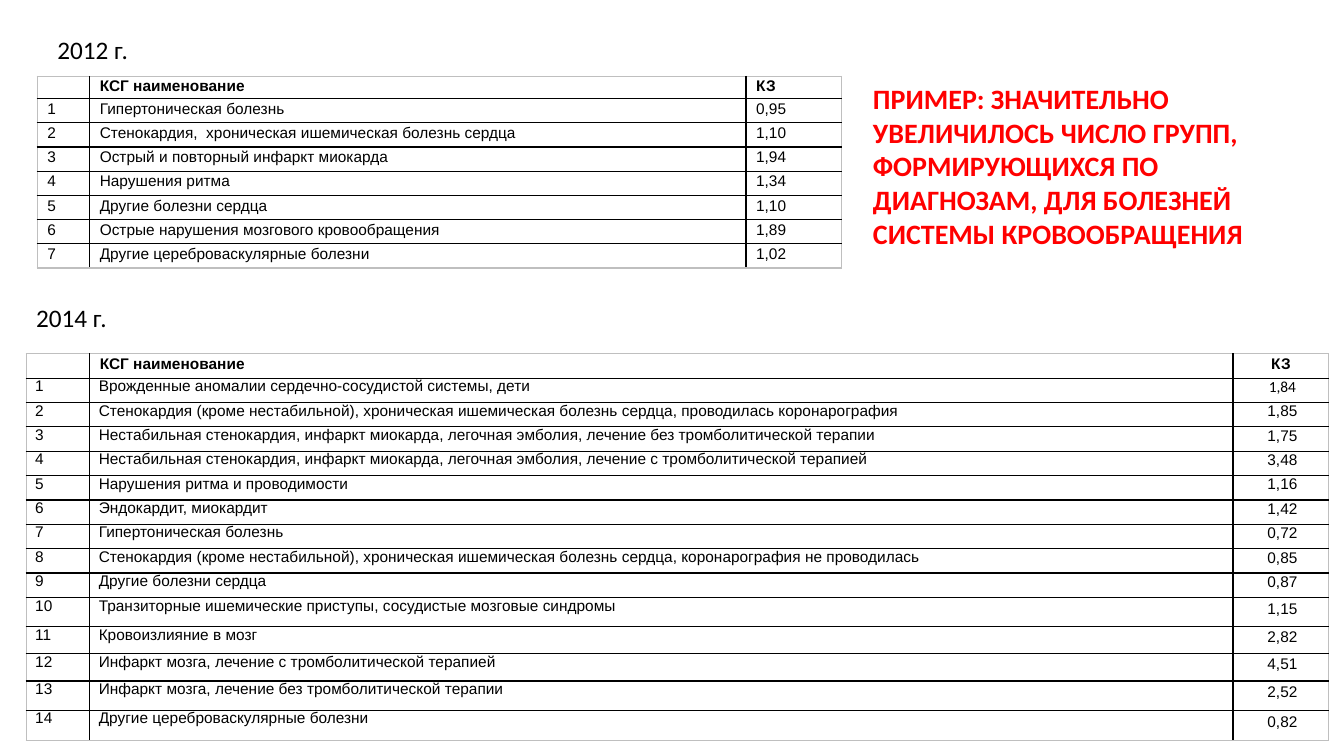
from lxml import etree
from pptx import Presentation
from pptx.dml.color import RGBColor
from pptx.enum.text import MSO_ANCHOR, MSO_AUTO_SIZE, PP_ALIGN
from pptx.oxml.ns import qn
from pptx.util import Inches, Pt

TOP, MIDDLE = MSO_ANCHOR.TOP, MSO_ANCHOR.MIDDLE
LEFT, CENTER = PP_ALIGN.LEFT, PP_ALIGN.CENTER
FIT = MSO_AUTO_SIZE.SHAPE_TO_FIT_TEXT
BLACK = RGBColor(0, 0, 0)
RED = RGBColor(255, 0, 0)
GREY = RGBColor(0xBF, 0xBF, 0xBF)

HEADER = ("", "КСГ наименование", "КЗ")
GROUPS_2012 = [
    ("Гипертоническая болезнь", "0,95"),
    ("Стенокардия,  хроническая ишемическая болезнь сердца", "1,10"),
    ("Острый и повторный инфаркт миокарда", "1,94"),
    ("Нарушения ритма", "1,34"),
    ("Другие болезни сердца", "1,10"),
    ("Острые нарушения мозгового кровообращения", "1,89"),
    ("Другие цереброваскулярные болезни", "1,02"),
]
GROUPS_2014 = [
    ("Врожденные аномалии сердечно-сосудистой системы, дети", "1,84"),
    ("Стенокардия (кроме нестабильной), хроническая ишемическая болезнь сердца, проводилась коронарография", "1,85"),
    ("Нестабильная стенокардия, инфаркт миокарда, легочная эмболия, лечение без тромболитической терапии", "1,75"),
    ("Нестабильная стенокардия, инфаркт миокарда, легочная эмболия, лечение с тромболитической терапией", "3,48"),
    ("Нарушения ритма и проводимости", "1,16"),
    ("Эндокардит, миокардит", "1,42"),
    ("Гипертоническая болезнь", "0,72"),
    ("Стенокардия (кроме нестабильной), хроническая ишемическая болезнь сердца, коронарография не проводилась", "0,85"),
    ("Другие болезни сердца", "0,87"),
    ("Транзиторные ишемические приступы, сосудистые мозговые синдромы", "1,15"),
    ("Кровоизлияние в мозг", "2,82"),
    ("Инфаркт мозга, лечение с тромболитической терапией", "4,51"),
    ("Инфаркт мозга, лечение без тромболитической терапии", "2,52"),
    ("Другие цереброваскулярные болезни", "0,82"),
]
HEADER_INSETS = (0.1, 0, 0.1, 0)
TABLES = [
    {"groups": GROUPS_2012, "at": (0.37, 0.76), "height": 1.9,
     "cols": (0.52, 6.51, 0.95), "first": [0.22], "last": [],
     "insets": HEADER_INSETS, "anchor": MIDDLE, "value_align": LEFT, "fonts": {}},
    {"groups": GROUPS_2014, "at": (0.26, 3.51), "height": 3.84,
     "cols": (0.63, 11.34, 0.95), "first": [], "last": [0.29, 0.27, 0.27, 0.29, 0.3],
     "insets": (0.09, 0.04, 0.06, 0.07), "anchor": TOP, "value_align": CENTER,
     "fonts": {(1, 2): "Calibri"}},
]
CAPTION = {"size": Pt(18), "name": "Calibri", "bold": False}
CALLOUT = {"size": Pt(20), "name": "Calibri", "bold": True}
TEXTS = [
    ("2012 г.", (0.47, 0.29, 0.91, 0.4), False, CAPTION, BLACK),
    ("2014 г.", (0.26, 2.95, 0.91, 0.4), False, CAPTION, BLACK),
    ("ПРИМЕР: ЗНАЧИТЕЛЬНО УВЕЛИЧИЛОСЬ ЧИСЛО ГРУПП, ФОРМИРУЮЩИХСЯ ПО "
     "ДИАГНОЗАМ, ДЛЯ БОЛЕЗНЕЙ СИСТЕМЫ КРОВООБРАЩЕНИЯ",
     (8.56, 0.76, 4.51, 1.78), True, CALLOUT, RED),
]


def set_format(target, values):
    for name, value in values.items():
        setattr(target, name, value)


def add_border(cell, side, color):
    ln = etree.SubElement(cell._tc.get_or_add_tcPr(), qn("a:" + side), w=str(Pt(1)))
    fill = etree.SubElement(ln, qn("a:solidFill"))
    etree.SubElement(fill, qn("a:srgbClr"), val=str(color))


def add_groups(s, t):
    rows = [HEADER] + [(str(n), *group) for n, group in enumerate(t["groups"], 1)]
    fixed = t["first"] + t["last"]
    regular = len(rows) - len(fixed)
    step = (t["height"] - sum(fixed)) / regular
    heights = t["first"] + [step] * regular + t["last"]
    x, y = t["at"]
    table = s.shapes.add_table(len(rows), len(HEADER), Inches(x), Inches(y),
                               Inches(sum(t["cols"])), Inches(t["height"])).table
    set_format(table, {"first_row": False, "horz_banding": False})
    for col, width in zip(table.columns, t["cols"]):
        col.width = Inches(width)
    last_row, last_col = len(rows) - 1, len(HEADER) - 1
    for i, row in enumerate(rows):
        table.rows[i].height = Inches(heights[i])
        for j, text in enumerate(row):
            cell = table.cell(i, j)
            insets = t["insets"] if i else HEADER_INSETS
            sides = ("margin_left", "margin_top", "margin_right", "margin_bottom")
            set_format(cell, dict(zip(sides, map(Inches, insets))))
            cell.vertical_anchor = MIDDLE if i == 0 or j == last_col else t["anchor"]
            edges = {"lnL": j == 0, "lnR": j == last_col, "lnT": i == 0, "lnB": i == last_row}
            for side, outer in edges.items():
                add_border(cell, side, GREY if outer else BLACK)
            cell.fill.background()
            p = cell.text_frame.paragraphs[0]
            set_format(p, {"line_spacing": 0.7,
                           "alignment": t["value_align"] if j == last_col else LEFT})
            if not text:
                etree.SubElement(p._p, qn("a:endParaRPr"), sz="1100")
                continue
            r = p.add_run()
            r.text = text
            set_format(r.font, {"size": Pt(11), "bold": i == 0,
                                "name": t["fonts"].get((i, j), "Arial")})
            r.font.color.rgb = BLACK


def add_text(s, text, box, wrap, font, color):
    tf = s.shapes.add_textbox(*map(Inches, box)).text_frame
    set_format(tf, {"word_wrap": wrap, "auto_size": FIT})
    r = tf.paragraphs[0].add_run()
    r.text = text
    set_format(r.font, font)
    r.font.color.rgb = color


def main():
    prs = Presentation()
    set_format(prs, {"slide_width": Inches(13.33), "slide_height": Inches(7.5)})
    s = prs.slides.add_slide(prs.slide_layouts[6])
    for t in TABLES:
        add_groups(s, t)
    for item in TEXTS:
        add_text(s, *item)
    prs.save("out.pptx")


if __name__ == "__main__":
    main()
